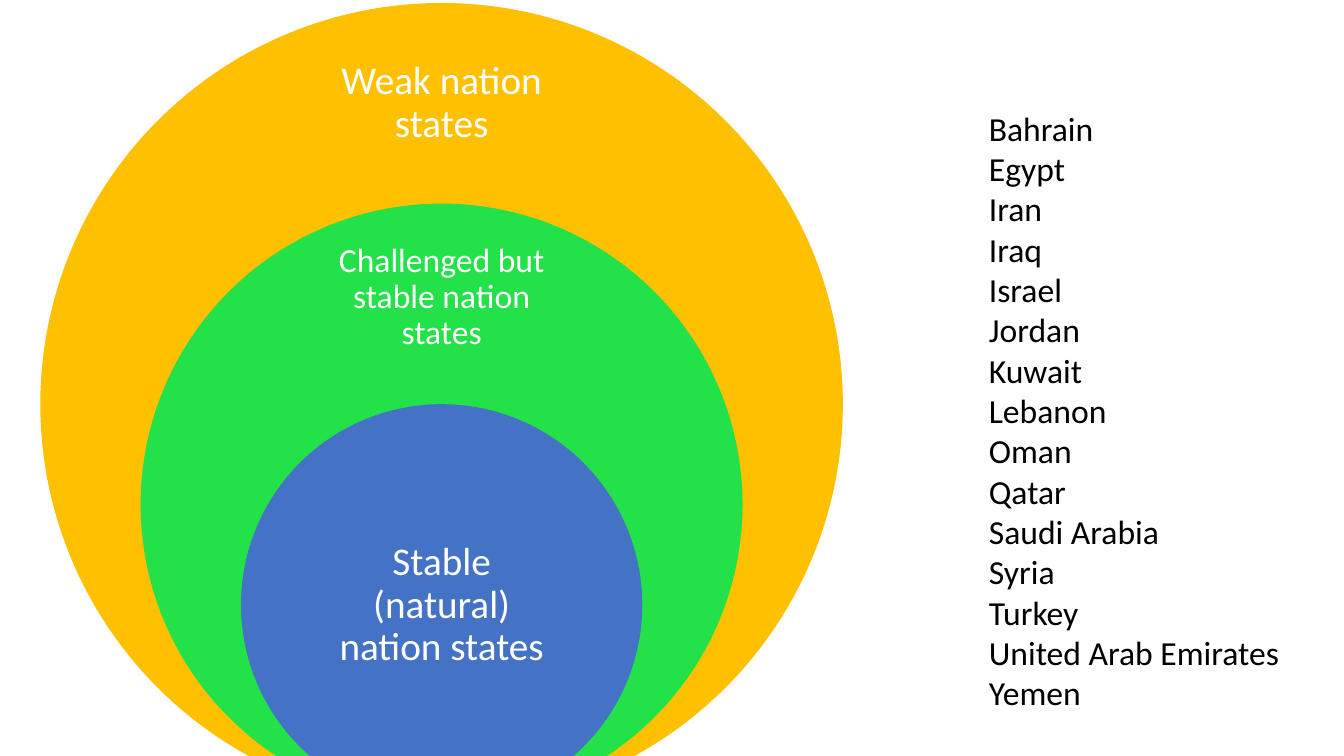
from dataclasses import dataclass

from pptx import Presentation
from pptx.dml.color import RGBColor
from pptx.enum.shapes import MSO_SHAPE
from pptx.enum.text import MSO_ANCHOR, PP_ALIGN
from pptx.util import Inches, Pt

OVAL = MSO_SHAPE.OVAL
TOP, MIDDLE = MSO_ANCHOR.TOP, MSO_ANCHOR.MIDDLE
LEFT, CENTER = PP_ALIGN.LEFT, PP_ALIGN.CENTER


@dataclass(frozen=True)
class Theme:
    font: str = "Calibri"
    large: int = 28
    small: int = 24
    white: str = "FFFFFF"
    black: str = "000000"
    gold: str = "FFC000"
    green: str = "23E148"
    blue: str = "4472C4"


class Page:
    def __init__(self, slide, theme):
        self.slide = slide
        self.theme = theme

    def disc(self, center, base, size, color):
        """Draw a circle that stands on the given base line."""
        shape = self.slide.shapes.add_shape(
            OVAL, Inches(center - size / 2), Inches(base - size),
            Inches(size), Inches(size))
        shape.shadow.inherit = False
        shape.fill.solid()
        shape.fill.fore_color.rgb = RGBColor.from_string(color)
        shape.line.fill.background()

    def text(self, box, lines, size, color, align=LEFT, anchor=TOP,
             inset=(0.1, 0.05), spacing=1.0):
        frame = self.slide.shapes.add_textbox(*map(Inches, box)).text_frame
        frame.word_wrap = True
        frame.vertical_anchor = anchor
        frame.margin_left = frame.margin_right = Inches(inset[0])
        frame.margin_top = frame.margin_bottom = Inches(inset[1])
        for i, line in enumerate(lines):
            para = frame.add_paragraph() if i else frame.paragraphs[0]
            para.alignment = align
            para.line_spacing = spacing
            run = para.add_run()
            run.text = line
            run.font.name = self.theme.font
            run.font.size = Pt(size)
            run.font.color.rgb = RGBColor.from_string(color)


def main():
    theme = Theme()
    deck = Presentation()
    deck.slide_width, deck.slide_height = Inches(13.33), Inches(7.5)
    blank = deck.slide_layouts[6]
    page = Page(deck.slides.add_slide(blank), theme)

    center, base, unit = 4.38, 7.99, 1.99
    width = 2.78
    # units across, fill, label, label top, label height, type size, inset
    rings = [
        (4, theme.gold, "Weak nation states", 0.43, 1.19, theme.large, 0.22),
        (3, theme.green, "Challenged but stable nation states",
         2.39, 1.12, theme.small, 0.19),
        (2, theme.blue, "Stable (natural) nation states",
         5.01, 1.99, theme.large, 0.22),
    ]
    for count, color, label, top, height, size, inset in rings:
        page.disc(center, base, count * unit, color)
        page.text((center - width / 2, top, width, height), [label], size,
                  theme.white, CENTER, MIDDLE, (inset, inset), 0.9)

    states = ["Bahrain", "Egypt", "Iran", "Iraq", "Israel", "Jordan",
              "Kuwait", "Lebanon", "Oman", "Qatar", "Saudi Arabia", "Syria",
              "Turkey", "United Arab Emirates", "Yemen"]
    page.text((9.71, 1.02, 3.5, 6.16), states, theme.small, theme.black)

    deck.save("out.pptx")


if __name__ == "__main__":
    main()
